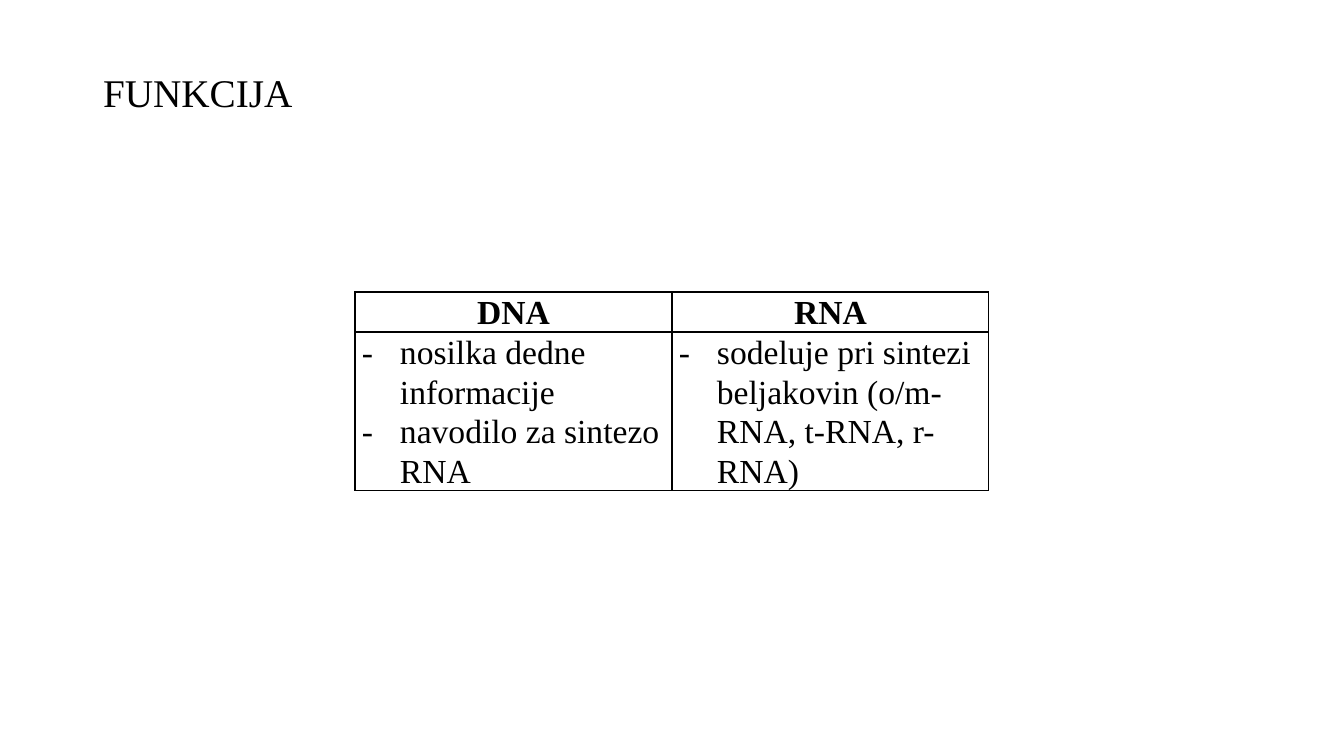
from dataclasses import dataclass

from lxml.etree import SubElement
from pptx import Presentation
from pptx.dml.color import RGBColor
from pptx.enum.text import MSO_ANCHOR as Anchor, MSO_AUTO_SIZE as AutoSize, PP_ALIGN as Align
from pptx.oxml.ns import qn
from pptx.table import _Cell as Cell
from pptx.text.text import TextFrame
from pptx.util import Emu, Pt

FONT = "Times New Roman"
BLACK = "000000"
COLUMN_WIDTH = 317
HEADER_HEIGHT = 40
BODY_HEIGHT = 158
CELL_INSET = 7
BULLET_INDENT = 38


@dataclass(frozen=True)
class NucleicAcid:
    name: str
    functions: tuple[str, ...]


ACIDS = (
    NucleicAcid("DNA", ("nosilka dedne informacije", "navodilo za sintezo RNA")),
    NucleicAcid("RNA", ("sodeluje pri sintezi beljakovin (o/m-RNA, t-RNA, r-RNA)",)),
)


def px(length: int) -> Emu:
    return Emu(round(length * 914400 / 100.8))


def colour(value: str) -> RGBColor:
    return RGBColor.from_string(value)


def write(frame: TextFrame, lines: tuple[str, ...], *, size: int,
          bold: bool = False, align: Align = Align.LEFT, spacing: float = 1.0,
          after: int = 0, bullet: str = "") -> None:
    for index, line in enumerate(lines):
        para = frame.add_paragraph() if index else frame.paragraphs[0]
        para.alignment = align
        para.line_spacing = spacing
        para.space_before = Pt(0)
        para.space_after = Pt(after if index == len(lines) - 1 else 0)
        if bullet:
            properties = para._p.get_or_add_pPr()
            properties.set("marL", str(px(BULLET_INDENT)))
            properties.set("indent", str(-px(BULLET_INDENT)))
            SubElement(properties, qn("a:buFont"), typeface=FONT)
            SubElement(properties, qn("a:buChar"), char=bullet)
        span = para.add_run()
        span.text = line
        span.font.name = FONT
        span.font.size = Pt(size)
        span.font.bold = bold
        span.font.color.rgb = colour(BLACK)


def format_cell(cell: Cell) -> None:
    cell.margin_left = cell.margin_right = px(CELL_INSET)
    cell.margin_top = cell.margin_bottom = 0
    cell.vertical_anchor = Anchor.TOP
    properties = cell._tc.get_or_add_tcPr()
    for side in ("a:lnL", "a:lnR", "a:lnT", "a:lnB"):
        border = SubElement(properties, qn(side), w=str(Pt(1)))
        fill = SubElement(border, qn("a:solidFill"))
        SubElement(fill, qn("a:srgbClr"), val=BLACK)
    cell.fill.background()


def main() -> None:
    deck = Presentation()
    deck.slide_width, deck.slide_height = px(1344), px(756)
    page = deck.slides.add_slide(deck.slide_layouts[5])

    title = page.shapes.title
    title.left, title.top = px(93), px(69)
    title.width, title.height = px(1159), px(613)
    title.text_frame.word_wrap = True
    title.text_frame.auto_size = AutoSize.NONE
    title.text_frame.vertical_anchor = Anchor.TOP
    write(title.text_frame, ("FUNKCIJA",), size=28, spacing=0.9)

    table = page.shapes.add_table(
        2, len(ACIDS), px(355), px(292),
        px(COLUMN_WIDTH * len(ACIDS)), px(HEADER_HEIGHT + BODY_HEIGHT)).table
    table.first_row = table.horz_banding = False
    for row, height in zip(table.rows, (HEADER_HEIGHT, BODY_HEIGHT)):
        row.height = px(height)
    for index, acid in enumerate(ACIDS):
        table.columns[index].width = px(COLUMN_WIDTH)
        header, body = table.cell(0, index), table.cell(1, index)
        for cell in (header, body):
            format_cell(cell)
        write(header.text_frame, (acid.name,), size=24, bold=True,
              align=Align.CENTER, spacing=1.07, after=8)
        write(body.text_frame, acid.functions, size=24, spacing=1.07,
              after=8, bullet="-")

    deck.save("out.pptx")


if __name__ == "__main__":
    main()
